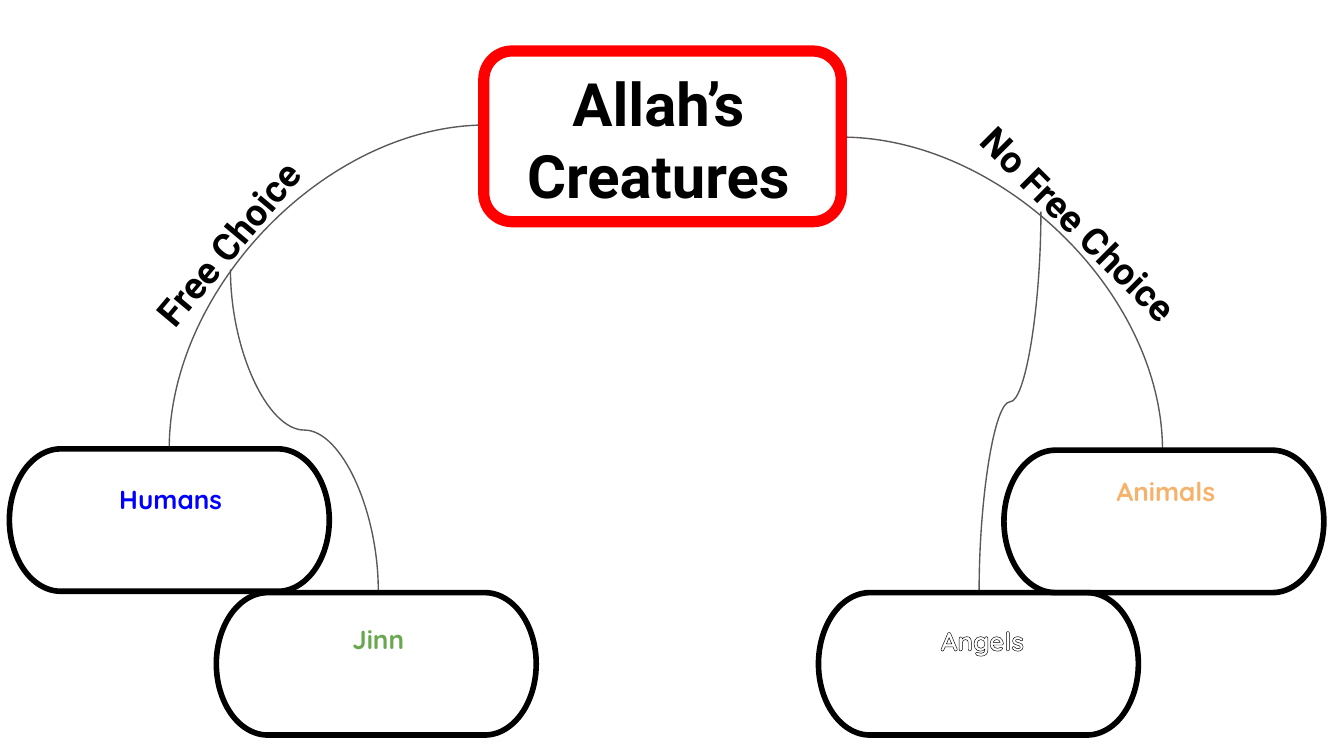
from lxml import etree
from pptx import Presentation
from pptx import util as u
from pptx.dml.color import RGBColor
from pptx.enum import shapes, text
from pptx.oxml import ns

BLACK = RGBColor(0x00, 0x00, 0x00)
WHITE = RGBColor(0xFF, 0xFF, 0xFF)
RED = RGBColor(0xFF, 0x00, 0x00)
BLUE = RGBColor(0x00, 0x00, 0xFF)
GREEN = RGBColor(0x6A, 0xA8, 0x4F)
ORANGE = RGBColor(0xF6, 0xB2, 0x6B)
GRAY = RGBColor(0x59, 0x59, 0x59)

# Widescreen, 16:9
presentation = Presentation()
presentation.slide_width = u.Inches(10)
presentation.slide_height = u.Inches(10 * 9 / 16)
slide = presentation.slides.add_slide(presentation.slide_layouts[6])


def add_frame(kind, box, color, weight):
    shape = slide.shapes.add_shape(kind, *[u.Inches(v) for v in box])
    shape.shadow.inherit = False
    shape.fill.background()
    shape.line.color.rgb = color
    shape.line.width = u.Pt(weight)
    return shape


def add_label(words, box, font_name, size, color, inset=0.05, centered=True):
    label = slide.shapes.add_textbox(*[u.Inches(v) for v in box])
    frame = label.text_frame
    frame.word_wrap = True
    frame.vertical_anchor = text.MSO_ANCHOR.TOP
    frame.margin_left = frame.margin_right = u.Inches(0.1)
    frame.margin_top = frame.margin_bottom = u.Inches(inset)
    paragraph = frame.paragraphs[0]
    paragraph.text = words
    paragraph.alignment = text.PP_ALIGN.CENTER if centered else text.PP_ALIGN.LEFT
    paragraph.font.name = font_name
    paragraph.font.size = u.Pt(size)
    paragraph.font.bold = True
    paragraph.font.color.rgb = color
    return label


# Curved branches: left, top, width, height, rotation, mirrored, preset
branches = [
    (1.26, 0.93, 2.36, 2.41, 0, True, "curvedConnector2"),
    (6.29, 0.99, 2.33, 2.39, 90, True, "curvedConnector2"),
    (1.07, 2.65, 2.39, 1.10, 270, True, "curvedConnector3"),
    (6.10, 2.76, 2.83, 0.46, 90, False, "curvedConnector3"),
]
for left, top, width, height, rotation, mirrored, preset in branches:
    start, end = (left + width, left) if mirrored else (left, left + width)
    branch = slide.shapes.add_connector(
        shapes.MSO_CONNECTOR.CURVE,
        u.Inches(start), u.Inches(top), u.Inches(end), u.Inches(top + height))
    branch.line.color.rgb = GRAY
    branch.line.width = u.Pt(0.75)
    properties = branch._element.spPr
    properties.find(ns.qn("a:prstGeom")).set("prst", preset)
    if rotation:
        properties.find(ns.qn("a:xfrm")).set("rot", str(rotation * 60000))
    etree.SubElement(properties, ns.qn("a:effectLst"))

# Branch names along the curves
for words, box, rotation in [
    ("Free Choice", (0.78, 1.45, 1.95, 0.47), 310),
    ("No Free Choice", (6.99, 1.45, 2.21, 0.45), 45),
]:
    label = add_label(words, box, "Roboto", 20, BLACK, inset=0.1, centered=False)
    label.rotation = rotation

# Creatures: frame position, then name
creatures = [
    (0.07, 3.34, "Humans", (0.31, 3.55, 1.92, 0.68), BLUE),
    (1.61, 4.41, "Jinn", (2.03, 4.59, 1.57, 0.68), GREEN),
    (7.47, 3.35, "Animals", (7.67, 3.49, 2.01, 0.68), ORANGE),
    (6.09, 4.41, "Angels", (6.35, 4.60, 1.92, 0.77), WHITE),
]
for left, top, name, box, color in creatures:
    add_frame(shapes.MSO_SHAPE.FLOWCHART_TERMINATOR, (left, top, 2.38, 1.06), BLACK, 3)
    label = add_label(name, box, "Quicksand", 14, color)
    if color == WHITE:
        # Black outline keeps the white name readable
        run_properties = label.text_frame.paragraphs[0].runs[0]._r.get_or_add_rPr()
        outline = etree.SubElement(run_properties, ns.qn("a:ln"), w=str(u.Pt(3)))
        fill = etree.SubElement(outline, ns.qn("a:solidFill"))
        etree.SubElement(fill, ns.qn("a:srgbClr"), val=str(BLACK))

# Title
add_label("Allah’s Creatures", (3.62, 0.4, 2.56, 1.06), "Roboto", 32, BLACK, inset=0.1)
title_frame = add_frame(shapes.MSO_SHAPE.ROUNDED_RECTANGLE, (3.6, 0.38, 2.66, 1.27), RED, 6)
title_frame.adjustments[0] = 0.167

presentation.save("out.pptx")
